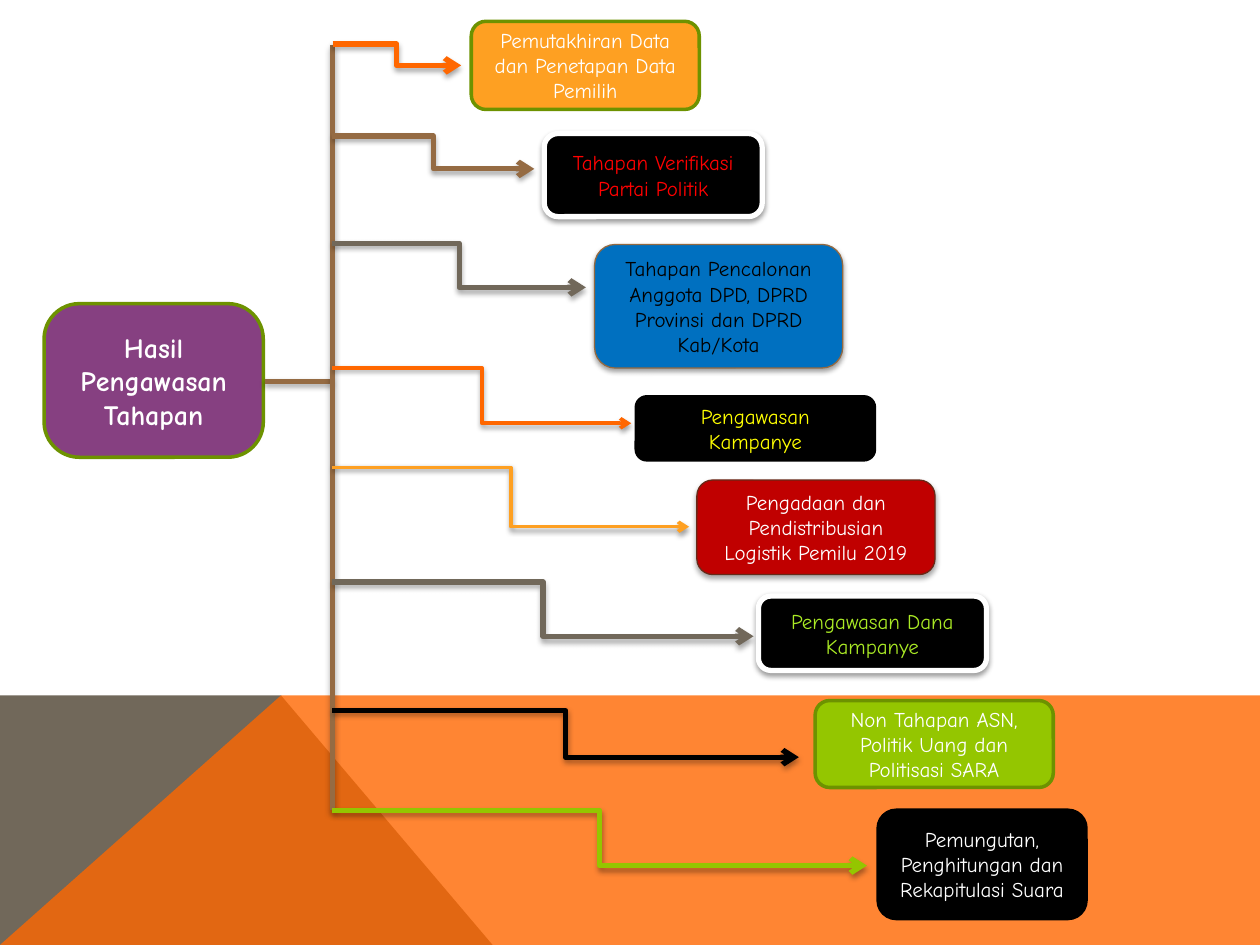
import pptx
import pptx.dml.color
import pptx.enum.shapes
import pptx.enum.text
import pptx.oxml
import pptx.oxml.ns
import pptx.util
from lxml import etree

Pt = pptx.util.Pt
SHAPES = pptx.enum.shapes.MSO_SHAPE
CONNECTORS = pptx.enum.shapes.MSO_CONNECTOR

WIDTH, HEIGHT = 720, 540
BAND_TOP = 397.4
TRUNK_X = 190

WHITE, BLACK, BROWN, GREY = "FFFFFF", "000000", "956B43", "71685A"
ORANGE, AMBER, LIME, OLIVE = "FF6700", "FEA022", "94C600", "6D9200"

# Shadow styles: opacity in percent, blur and distance in points
STRONG_SHADOW = (38, 3.1, 1.6)
SOFT_SHADOW = (35, 3.1, 1.8)

# text, box (left, top, width, height), fill, text colour, outline, outline width,
# box shadow, arrow (start y, end x, end y), arrow colour, arrow width
STAGES = [
    ("Pemutakhiran Data dan Penetapan Data Pemilih", (269.3, 12.2, 130.3, 50.4),
     AMBER, WHITE, OLIVE, 2, None, (25.2, 263.5, 37.4), ORANGE, 3),
    ("Tahapan Verifikasi Partai Politik", (311, 76.3, 124.6, 47.5),
     BLACK, "FF0000", WHITE, 3, STRONG_SHADOW, (77.8, 305.3, 96.5), BROWN, 3),
    ("Tahapan Pencalonan Anggota DPD, DPRD Provinsi dan DPRD Kab/Kota",
     (339.8, 139.7, 141.8, 70.6),
     "0070C0", BLACK, "946940", 0.75, STRONG_SHADOW, (139, 334.8, 164.2), GREY, 3),
    ("Pengawasan Kampanye", (363.6, 226.8, 136.1, 36),
     BLACK, "FFFF00", BLACK, 2, None, (210.2, 360.7, 241.9), ORANGE, 2),
    ("Pengadaan dan Pendistribusian Logistik Pemilu 2019", (398.2, 274.3, 136.1, 54),
     "C00000", WHITE, "682918", 0.75, SOFT_SHADOW, (267.1, 393.8, 301), AMBER, 2),
    ("Pengawasan Dana Kampanye", (433.4, 340.6, 130.3, 42.5),
     BLACK, "AAEA25", WHITE, 3, STRONG_SHADOW, (332.6, 430.6, 363.6), GREY, 3),
    ("Non Tahapan ASN, Politik Uang dan Politisasi SARA", (465.8, 400.3, 136.1, 49.7),
     LIME, WHITE, OLIVE, 2, None, (406.1, 456.5, 432.7), BLACK, 3),
    ("Pemungutan, Penghitungan dan Rekapitulasi Suara", (501.8, 463, 118.8, 61.9),
     BLACK, WHITE, BLACK, 2, None, (463, 495.4, 494.6), LIME, 3),
]


def rgb(code):
    return pptx.dml.color.RGBColor.from_string(code)


def add_child(parent, tag, **attributes):
    values = {name: str(value) for name, value in attributes.items()}
    return etree.SubElement(parent, pptx.oxml.ns.qn(tag), values)


class Diagram:
    font = "Comic Neue"

    def __init__(self, slide):
        self.slide = slide

    def set_shadow(self, properties, shadow):
        """Replace the theme effects with a downward shadow, or with none."""
        for old in properties.findall(pptx.oxml.ns.qn("a:effectLst")):
            properties.remove(old)
        effects = add_child(properties, "a:effectLst")
        if shadow:
            opacity, blur, distance = shadow
            outer = add_child(effects, "a:outerShdw", blurRad=int(Pt(blur)),
                              dist=int(Pt(distance)), dir=90 * 60000, rotWithShape=0)
            color = add_child(outer, "a:srgbClr", val=BLACK)
            add_child(color, "a:alpha", val=opacity * 1000)

    def polygon(self, points, fill, opacity=100):
        corners = [(Pt(x), Pt(y)) for x, y in points]
        builder = self.slide.shapes.build_freeform(*corners[0])
        builder.add_line_segments(corners[1:], close=True)
        shape = builder.convert_to_shape()
        shape.shadow.inherit = False
        shape.fill.solid()
        shape.fill.fore_color.rgb = rgb(fill)
        shape.line.fill.background()
        if opacity < 100:
            color = shape._element.spPr.find(".//" + pptx.oxml.ns.qn("a:srgbClr"))
            add_child(color, "a:alpha", val=opacity * 1000)

    def box(self, text, place, fill, color, outline, width, shadow=None,
            size=12, bold=False, rounding=None):
        shape = self.slide.shapes.add_shape(SHAPES.ROUNDED_RECTANGLE, *map(Pt, place))
        if rounding:
            shape.adjustments[0] = rounding
        shape.fill.solid()
        shape.fill.fore_color.rgb = rgb(fill)
        shape.line.color.rgb = rgb(outline)
        shape.line.width = Pt(width)
        self.set_shadow(shape._element.spPr, shadow)
        frame = shape.text_frame
        frame.word_wrap = True
        frame.vertical_anchor = pptx.enum.text.MSO_ANCHOR.MIDDLE
        paragraph = frame.paragraphs[0]
        paragraph.text = text
        paragraph.alignment = pptx.enum.text.PP_ALIGN.CENTER
        paragraph.font.name = self.font
        paragraph.font.size = Pt(size)
        paragraph.font.bold = bold
        paragraph.font.color.rgb = rgb(color)

    def line(self, start, end, color, width=3, shadow=SOFT_SHADOW,
             kind=CONNECTORS.STRAIGHT):
        connector = self.slide.shapes.add_connector(kind, *map(Pt, start + end))
        connector.line.color.rgb = rgb(color)
        connector.line.width = Pt(width)
        self.set_shadow(connector._element.spPr, shadow)
        return connector

    def elbow_arrow(self, start, end, color, width):
        shadow = SOFT_SHADOW if width == 3 else STRONG_SHADOW
        connector = self.line(start, end, color, width, shadow, CONNECTORS.ELBOW)
        add_child(connector.line._get_or_add_ln(), "a:tailEnd", type="arrow")


def main():
    presentation = pptx.Presentation()
    presentation.slide_width = Pt(WIDTH)
    presentation.slide_height = Pt(HEIGHT)
    slide = presentation.slides.add_slide(presentation.slide_layouts[6])
    diagram = Diagram(slide)

    peak = (160.6, BAND_TOP)
    diagram.polygon([(0, HEIGHT), (0, BAND_TOP), peak, (281.5, HEIGHT)], GREY)
    diagram.polygon([(0, HEIGHT), peak, (WIDTH, BAND_TOP), (WIDTH, HEIGHT)], ORANGE, 80)

    diagram.box("Hasil Pengawasan Tahapan", (25.2, 173.5, 125.3, 87.8), "864081",
                WHITE, OLIVE, 2, size=16, bold=True, rounding=0.23)
    diagram.line((151.2, 218.2), (TRUNK_X, 218.2), BROWN)
    diagram.line((TRUNK_X, 463), (TRUNK_X, 25.9), BROWN)

    for *box, arrow, arrow_color, arrow_width in STAGES:
        start_y, end_x, end_y = arrow
        diagram.elbow_arrow((TRUNK_X, start_y), (end_x, end_y), arrow_color, arrow_width)
        diagram.box(*box)

    presentation.save("out.pptx")


if __name__ == "__main__":
    main()
